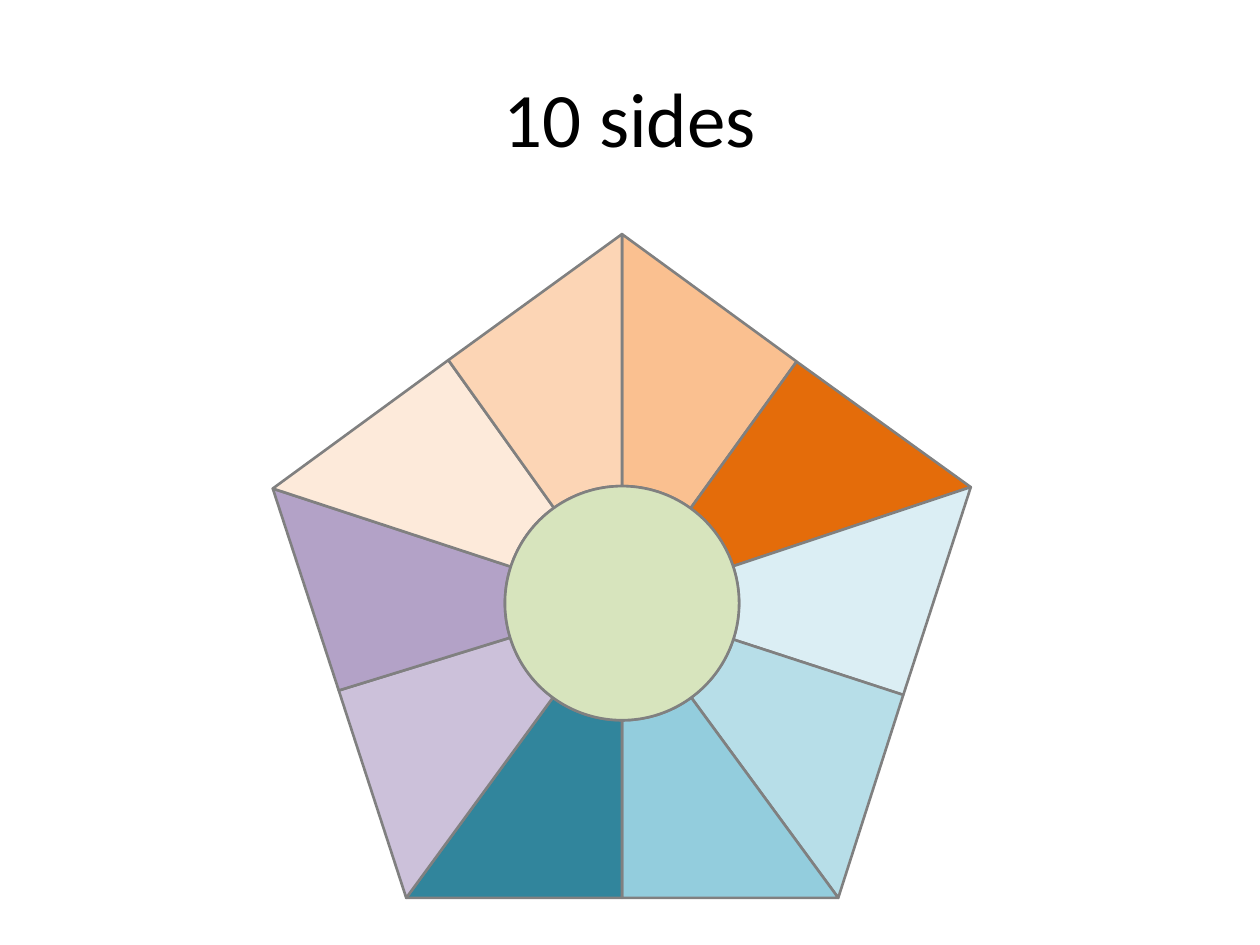
from math import atan2, cos, pi, sin

from pptx import Presentation
from pptx.dml.color import RGBColor
from pptx.enum.shapes import MSO_SHAPE
from pptx.enum.text import MSO_ANCHOR, PP_ALIGN
from pptx.util import Cm, Pt

# Content
TITLE = "10 sides"
COLORS = {"text": "000000", "line": "808080", "hub": "D7E4BD"}

# Each wedge: its starting point on the pentagon (cm, clockwise from the top) and fill
WEDGES = [
    ((12.54, 4.72), "FAC090"),
    ((16.06, 7.29), "E46C0A"),
    ((19.57, 9.82), "DBEEF4"),
    ((18.21, 14.01), "B7DEE8"),
    ((16.9, 18.1), "93CDDD"),
    ((12.54, 18.1), "31859C"),
    ((8.19, 18.1), "CCC1DA"),
    ((6.83, 13.92), "B3A2C7"),
    ((5.5, 9.85), "FDEADA"),
    ((9.04, 7.26), "FCD5B5"),
]
CX, CY, RADIUS = 12.54, 12.16, 2.36
ARC_STEPS = 8


def add_text(s, text, left, top, width, height, size, color, font="Calibri"):
    tb = s.shapes.add_textbox(Cm(left), Cm(top), Cm(width), Cm(height))
    tf = tb.text_frame
    tf.word_wrap = True
    tf.vertical_anchor = MSO_ANCHOR.MIDDLE
    p = tf.paragraphs[0]
    p.alignment = PP_ALIGN.CENTER
    r = p.add_run()
    r.text = text
    r.font.name = font
    r.font.size = Pt(size)
    r.font.color.rgb = RGBColor.from_string(color)


def paint(sp, fill):
    sp.shadow.inherit = False
    sp.fill.solid()
    sp.fill.fore_color.rgb = RGBColor.from_string(fill)
    sp.line.color.rgb = RGBColor.from_string(COLORS["line"])
    sp.line.width = Pt(1.5)


def clock_angle(point):
    return atan2(point[0] - CX, CY - point[1])


def add_wedge(s, start, end, fill):
    first = clock_angle(end)
    sweep = (first - clock_angle(start)) % (2 * pi)
    angles = [first - sweep * i / ARC_STEPS for i in range(ARC_STEPS + 1)]
    arc = [(CX + RADIUS * sin(a), CY - RADIUS * cos(a)) for a in angles]
    points = [(Cm(x), Cm(y)) for x, y in [start, end, *arc]]
    fb = s.shapes.build_freeform(*points[0])
    fb.add_line_segments(points[1:], close=True)
    paint(fb.convert_to_shape(), fill)


prs = Presentation()
prs.slide_width, prs.slide_height = Cm(25.4), Cm(19.05)
s = prs.slides.add_slide(prs.slide_layouts[6])

# Title
add_text(s, TITLE, 1.27, 0.76, 22.86, 3.18, size=44, color=COLORS["text"])

# Ring of wedges between the hub and the pentagon
for i, (start, fill) in enumerate(WEDGES):
    end = WEDGES[(i + 1) % len(WEDGES)][0]
    add_wedge(s, start, end, fill)

# Hub
hub = s.shapes.add_shape(MSO_SHAPE.OVAL, Cm(CX - RADIUS), Cm(CY - RADIUS),
                         Cm(2 * RADIUS), Cm(2 * RADIUS))
paint(hub, COLORS["hub"])

prs.save("out.pptx")
